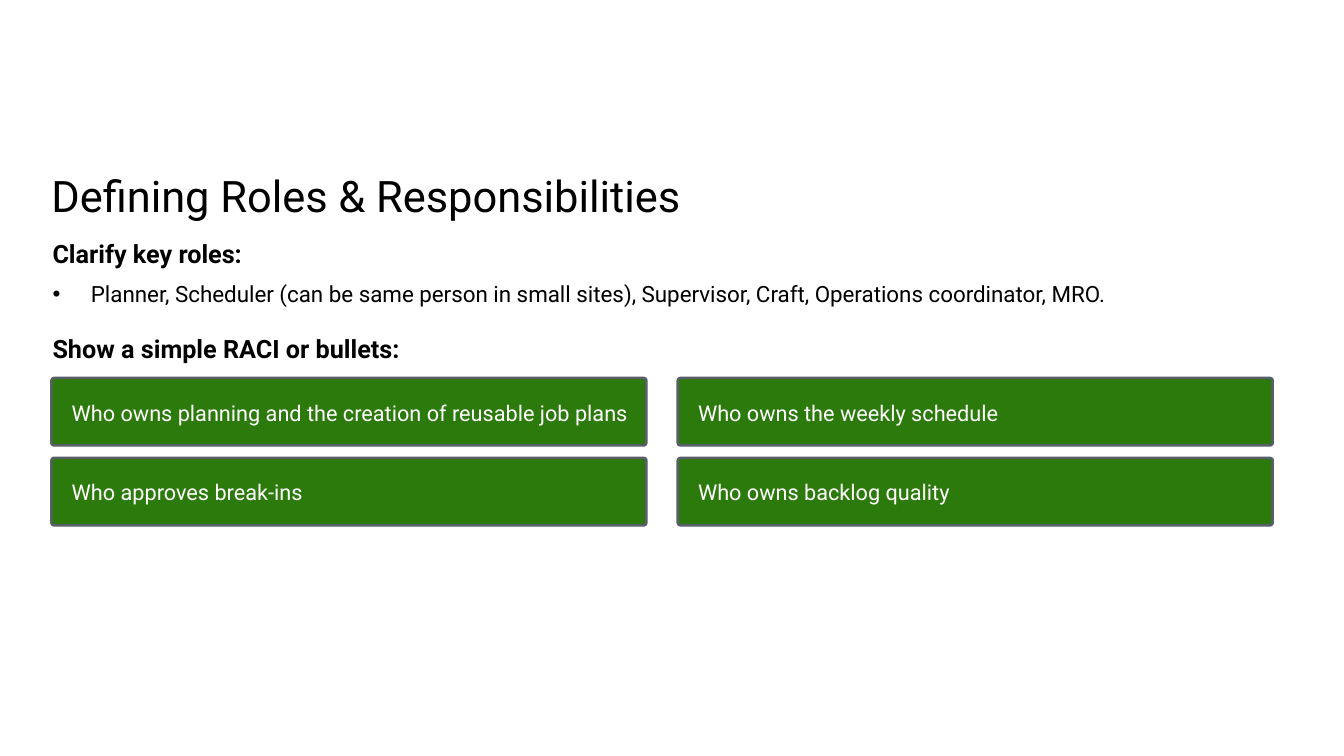
from lxml import etree
from pptx import Presentation
from pptx.dml.color import RGBColor
from pptx.enum import shapes, text
from pptx.oxml import ns
from pptx.util import Pt

# Content
TITLE = "Defining Roles & Responsibilities"
ROLES_HEADING = "Clarify key roles:"
ROLES = "Planner, Scheduler (can be same person in small sites), Supervisor, Craft, Operations coordinator, MRO."
RACI_HEADING = "Show a simple RACI or bullets:"
QUESTIONS = [
    ["Who owns planning and the creation of reusable job plans", "Who owns the weekly schedule"],
    ["Who approves break-ins", "Who owns backlog quality"],
]

# Style and layout, in points
COLORS = {"ink": "000000", "card": "2C7A0B", "border": "585F6B", "card_text": "FFFFFF"}
FONT = "Roboto"
HEADING = {"size": 18, "line": 21, "bold": True}
LEFT, CARD_TOP = 36.7, 270
CARD_W, CARD_H = 425, 48.2
COLUMN_GAP, ROW_GAP = 22.4, 8.9
CARD_INSET = 14


def prepare(frame, anchor=text.MSO_ANCHOR.TOP, left=0):
    frame.auto_size = text.MSO_AUTO_SIZE.NONE
    frame.word_wrap = True
    frame.vertical_anchor = anchor
    frame.margin_left = Pt(left)
    frame.margin_top = frame.margin_right = frame.margin_bottom = 0


def write(paragraph, words, size, line, color="ink", bold=False, before=0, bullet=None, indent=0):
    props = paragraph._p.get_or_add_pPr()
    props.set("marL", str(Pt(indent)))
    props.set("indent", str(-Pt(indent)))
    if bullet:
        etree.SubElement(props, ns.qn("a:buChar"), char=bullet)
    else:
        etree.SubElement(props, ns.qn("a:buNone"))
    paragraph.alignment = text.PP_ALIGN.LEFT
    paragraph.line_spacing = Pt(line)
    paragraph.space_before = Pt(before)
    paragraph.space_after = Pt(0)
    run = paragraph.add_run()
    run.text = words
    run.font.name = FONT
    run.font.size = Pt(size)
    run.font.bold = bold
    run.font.color.rgb = RGBColor.from_string(COLORS[color])


def place(shape, left, top, width, height):
    shape.left, shape.top = Pt(left), Pt(top)
    shape.width, shape.height = Pt(width), Pt(height)


deck = Presentation()
deck.slide_width, deck.slide_height = Pt(960), Pt(540)
slide = deck.slides.add_slide(deck.slide_layouts[1])

# Title
title = slide.shapes.title
place(title, LEFT, 118.8, 484, 39)
prepare(title.text_frame)
write(title.text_frame.paragraphs[0], TITLE, size=31, line=39)

# Roles and RACI headings
roles = slide.placeholders[1]
place(roles, 37.5, 170.6, 871, 90)
prepare(roles.text_frame)
write(roles.text_frame.paragraphs[0], ROLES_HEADING, **HEADING)
write(roles.text_frame.add_paragraph(), ROLES, size=16, line=17, before=10.7, bullet="•", indent=27.4)
write(roles.text_frame.add_paragraph(), RACI_HEADING, before=19.7, **HEADING)

# Question cards
for row, questions in enumerate(QUESTIONS):
    for column, question in enumerate(questions):
        left = LEFT + column * (CARD_W + COLUMN_GAP)
        top = CARD_TOP + row * (CARD_H + ROW_GAP)
        card = slide.shapes.add_shape(
            shapes.MSO_SHAPE.ROUNDED_RECTANGLE, Pt(left), Pt(top), Pt(CARD_W), Pt(CARD_H))
        card.adjustments[0] = 0.04
        card.shadow.inherit = False
        card.fill.solid()
        card.fill.fore_color.rgb = RGBColor.from_string(COLORS["card"])
        card.line.color.rgb = RGBColor.from_string(COLORS["border"])
        card.line.width = Pt(1.8)
        prepare(card.text_frame, anchor=text.MSO_ANCHOR.MIDDLE, left=CARD_INSET)
        write(card.text_frame.paragraphs[0], question, size=15.5, line=19.5, color="card_text")

deck.save("out.pptx")
